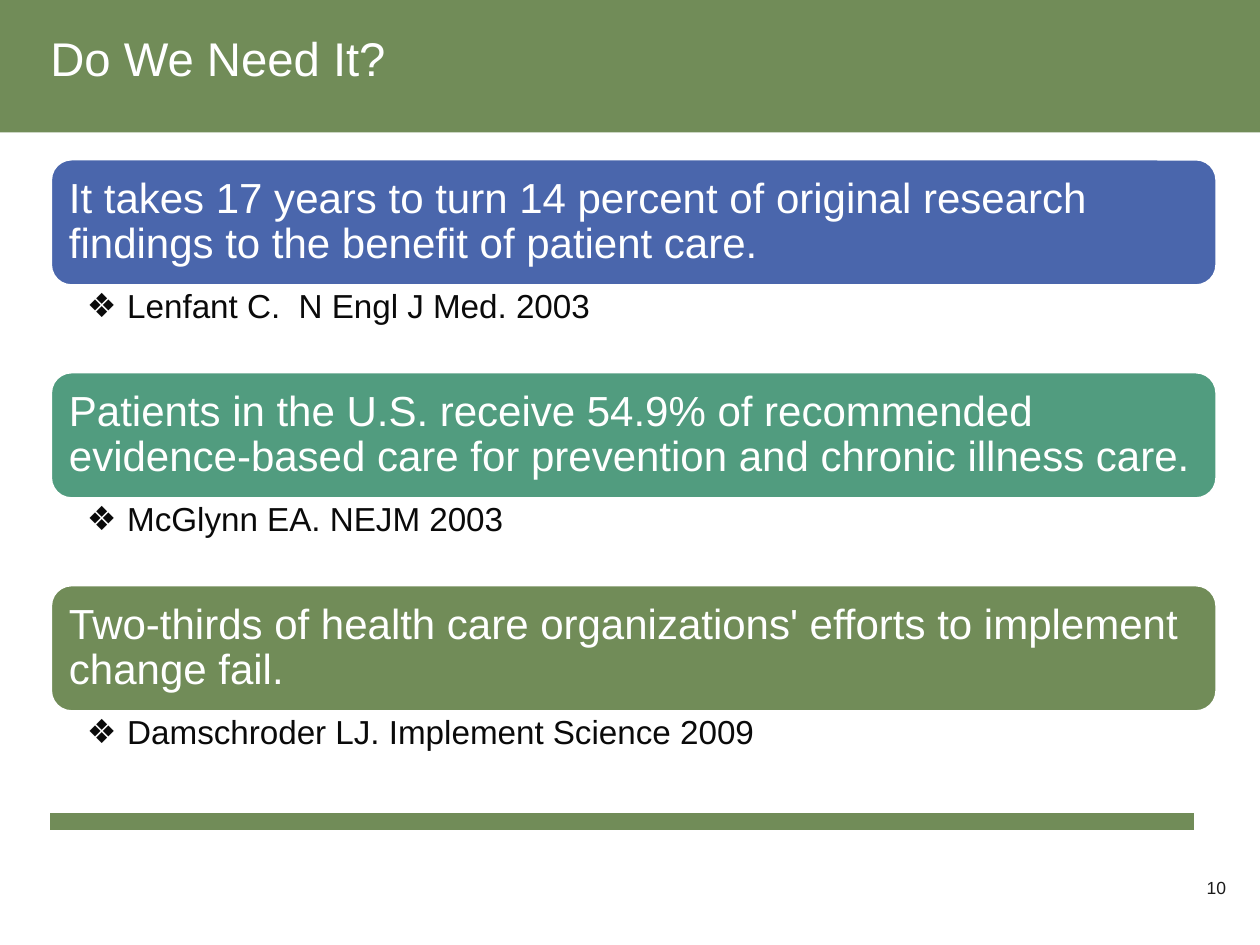
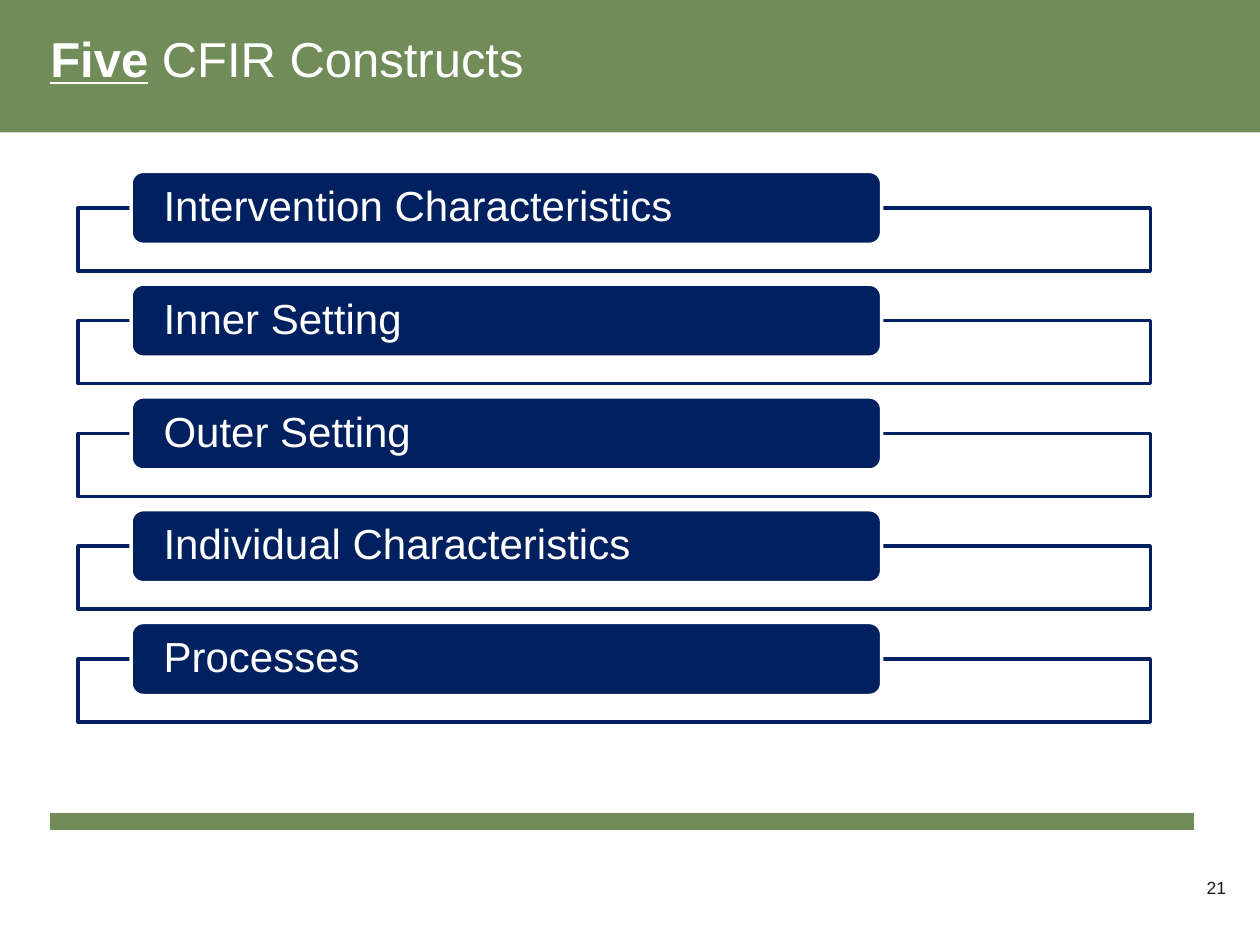
from dataclasses import dataclass

from lxml import etree
from pptx import Presentation
from pptx.dml.color import RGBColor
from pptx.enum import shapes, text
from pptx.oxml import ns
from pptx.util import Inches, Pt


@dataclass(frozen=True)
class Theme:
    font: str = "Arial"
    white: str = "FFFFFF"
    ink: str = "0A0A0A"
    number: str = "1A1A1A"
    green: str = "718C58"
    blue: str = "4A66AC"
    teal: str = "519C7F"
    navy: str = "002060"
    statement_size: int = 24
    source_size: int = 19
    number_size: int = 10
    rule_width: int = 10
    outline_width: int = 2


THEME = Theme()


def rgb(code):
    return RGBColor.from_string(code)


def sub(parent, tag, **attributes):
    return etree.SubElement(parent, ns.qn(tag), attributes)


def inches(box):
    return [Inches(value) for value in box]


def add_panel(page, kind, box, fill, outline=None):
    panel = page.shapes.add_shape(kind, *inches(box))
    panel.shadow.inherit = False
    panel.fill.solid()
    panel.fill.fore_color.rgb = rgb(fill)
    if outline:
        panel.line.color.rgb = rgb(outline)
        panel.line.width = Pt(THEME.outline_width)
    else:
        panel.line.fill.background()
    return panel


def set_frame(shape, margins, anchor=text.MSO_ANCHOR.TOP, wrap=True):
    """Prepare the text frame and return its first paragraph."""
    frame = shape.text_frame
    frame.word_wrap = wrap
    frame.vertical_anchor = anchor
    (frame.margin_left, frame.margin_top,
     frame.margin_right, frame.margin_bottom) = inches(margins)
    para = frame.paragraphs[0]
    para.alignment = text.PP_ALIGN.LEFT
    return para


def add_span(para, words, size, color, strong=False):
    span = para.add_run()
    span.text = words
    span.font.name = THEME.font
    span.font.size = Pt(size)
    span.font.color.rgb = rgb(color)
    span.font.bold = strong
    span.font.underline = strong


def add_bullet(para, symbol, indent):
    properties = para._p.get_or_add_pPr()
    properties.set("marL", str(Inches(indent)))
    properties.set("indent", str(-Inches(indent)))
    sub(properties, "a:buFont", typeface=THEME.font)
    sub(properties, "a:buChar", char=symbol)


def add_label(page, box, words, fill, margins):
    """Rounded bar with its statement inside."""
    bar = add_panel(page, shapes.MSO_SHAPE.ROUNDED_RECTANGLE, box, fill, THEME.white)
    para = set_frame(bar, margins, text.MSO_ANCHOR.MIDDLE)
    para.line_spacing = 0.9
    add_span(para, words, THEME.statement_size, THEME.white)


def add_base(deck, title_spans, title_size, number):
    """Page with title band, footer rule and page number."""
    page = deck.slides.add_slide(deck.slide_layouts[6])

    # Page number
    box = page.shapes.add_textbox(*inches((9.55, 6.96, 0.18, 0.22)))
    para = set_frame(box, (0, 0, 0, 0), wrap=False)
    para.alignment = text.PP_ALIGN.RIGHT
    add_span(para, number, THEME.number_size, THEME.number)

    # Footer rule
    rule = page.shapes.add_connector(
        shapes.MSO_CONNECTOR.STRAIGHT, *inches((0.4, 6.52, 9.48, 6.52)))
    rule.line.color.rgb = rgb(THEME.green)
    rule.line.width = Pt(THEME.rule_width)
    sub(rule._element.spPr, "a:effectLst")

    # Title band
    add_panel(page, shapes.MSO_SHAPE.RECTANGLE, (0, -0.04, 10, 1.09), THEME.green)
    title = page.shapes.add_textbox(*inches((0.4, 0.18, 9.42, 1.03)))
    para = set_frame(title, (0, 0.05, 0, 0.05))
    for words, strong in title_spans:
        add_span(para, words, title_size, THEME.white, strong)
    return page


def add_evidence(page, box, findings):
    """Stack of statements, each with its source beneath."""
    left, top, width, height = box
    pitch = height / len(findings)
    bar_height = 1.01
    for index, (statement, source, fill) in enumerate(findings):
        y = top + index * pitch
        add_label(page, (left, y, width, bar_height), statement, fill, (0.1,) * 4)
        note = page.shapes.add_textbox(
            *inches((left, y + bar_height, width, pitch - bar_height)))
        para = set_frame(note, (0.29, 0.03, 0.19, 0.03))
        add_bullet(para, "❖", 0.32)
        para.line_spacing = 0.9
        add_span(para, source, THEME.source_size, THEME.ink)


def add_constructs(page, box, names):
    """Evenly spaced frames, each with a label over its top edge."""
    left, top, width, height = box
    label_height, frame_drop, frame_height = 0.58, 0.29, 0.5
    pitch = (height - frame_drop - frame_height) / (len(names) - 1)
    for index, name in enumerate(names):
        y = top + index * pitch
        frame = add_panel(page, shapes.MSO_SHAPE.RECTANGLE,
                          (left, y + frame_drop, width, frame_height),
                          THEME.white, THEME.navy)
        color = frame._element.spPr.find(ns.qn("a:solidFill"))[0]
        sub(color, "a:alpha", val="90000")
        add_label(page, (left + 0.42, y, width * 0.7, label_height),
                  name, THEME.navy, (0.23, 0, 0.23, 0))


def main():
    deck = Presentation()
    deck.slide_width, deck.slide_height = Inches(10), Inches(7.5)

    need = add_base(deck, [("Do We Need It?", False)], 27, "10")
    add_evidence(need, (0.4, 1.26, 9.26, 5.07), [
        ("It takes 17 years to turn 14 percent of original research findings "
         "to the benefit of patient care.",
         "Lenfant C.  N Engl J Med. 2003", THEME.blue),
        ("Patients in the U.S. receive 54.9% of recommended evidence-based care "
         "for prevention and chronic illness care.",
         "McGlynn EA. NEJM 2003", THEME.teal),
        ("Two-thirds of health care organizations' efforts to implement change fail.",
         "Damschroder LJ. Implement Science 2009", THEME.green),
    ])

    five = add_base(deck, [("Five", True), (" CFIR Constructs", False)], 28, "21")
    add_constructs(five, (0.62, 1.36, 8.51, 4.37), [
        "Intervention Characteristics", "Inner Setting", "Outer Setting",
        "Individual Characteristics", "Processes",
    ])

    deck.save("out.pptx")


if __name__ == "__main__":
    main()
